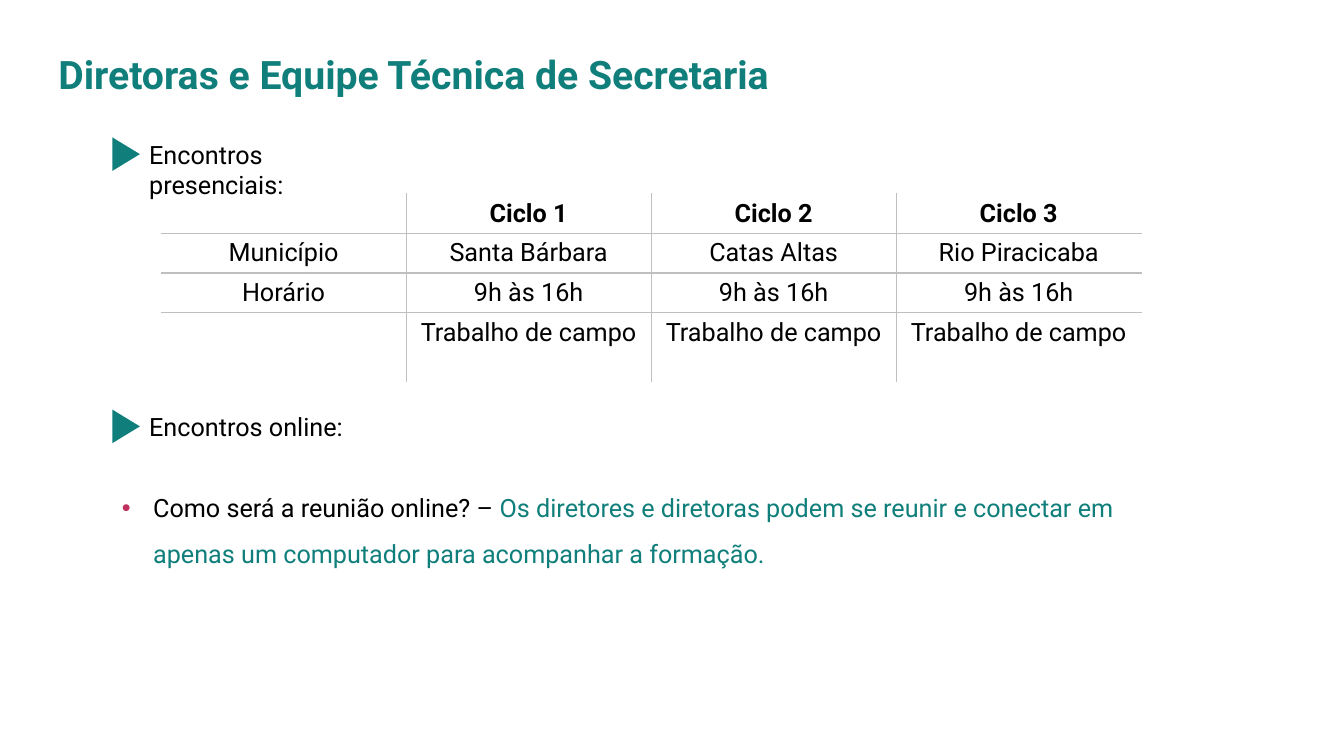
import lxml.etree
import pptx
import pptx.dml.color
import pptx.enum.shapes
import pptx.enum.text
import pptx.oxml
import pptx.oxml.ns
import pptx.util

Cm = pptx.util.Cm
Pt = pptx.util.Pt
RGBColor = pptx.dml.color.RGBColor
PP_ALIGN = pptx.enum.text.PP_ALIGN
qn = pptx.oxml.ns.qn

TEAL = RGBColor(0x10, 0x7F, 0x7B)
PINK = RGBColor(0xC0, 0x30, 0x5E)
GRAY = RGBColor(0xBF, 0xBF, 0xBF)
BLACK = RGBColor(0, 0, 0)

CYCLES = [
    ["", "Ciclo 1", "Ciclo 2", "Ciclo 3"],
    ["Município", "Santa Bárbara", "Catas Altas", "Rio Piracicaba"],
    ["Horário"] + ["9h às 16h"] * 3,
    [""] + ["Trabalho de campo"] * 3,
]
ROW_HEIGHTS = [Cm(1), Cm(1), Cm(1), Cm(1.75)]


def set_font(font, color=BLACK, size=18, bold=False):
    font.name = "Roboto"
    font.size = Pt(size)
    font.bold = bold
    font.color.rgb = color


def add_title(s, text, left, top, width, height):
    sp = s.shapes.title
    sp.left, sp.top, sp.width, sp.height = left, top, width, height
    tf = sp.text_frame
    tf.text = text
    tf.auto_size = pptx.enum.text.MSO_AUTO_SIZE.NONE
    tf.vertical_anchor = pptx.enum.text.MSO_ANCHOR.MIDDLE
    tf.margin_left = tf.margin_right = Cm(0.33)
    tf.margin_top = tf.margin_bottom = Cm(0.33)
    p = tf.paragraphs[0]
    p.alignment = PP_ALIGN.LEFT
    set_font(p.font, TEAL, 28, True)


def add_heading(s, text, left, top, width):
    # Marker pointing right, to the left of the label
    sp = s.shapes.add_shape(pptx.enum.shapes.MSO_SHAPE.ISOSCELES_TRIANGLE,
                            left - Cm(0.75), top + Cm(0.16), Cm(0.84), Cm(0.69))
    sp.rotation = 90
    sp.shadow.inherit = False
    sp.fill.solid()
    sp.fill.fore_color.rgb = TEAL
    sp.line.fill.background()
    # Label
    tf = s.shapes.add_textbox(left, top, width, Cm(1.02)).text_frame
    tf.word_wrap = True
    tf.margin_right = Cm(0.27)
    p = tf.paragraphs[0]
    p.text = text
    set_font(p.font)


def set_borders(cell, sides):
    tc_pr = cell._tc.get_or_add_tcPr()
    for i, side in enumerate(sides):
        ln = pptx.oxml.parse_xml(
            f'<a:ln{side} {pptx.oxml.ns.nsdecls("a")} w="12700"><a:solidFill>'
            f'<a:srgbClr val="{GRAY}"/></a:solidFill></a:ln{side}>')
        tc_pr.insert(i, ln)


def add_cycles_table(s, left, top, width):
    rows, cols = len(CYCLES), len(CYCLES[0])
    table = s.shapes.add_table(rows, cols, left, top, width, sum(ROW_HEIGHTS)).table
    table.first_row = table.horz_banding = False
    for row, height in zip(table.rows, ROW_HEIGHTS):
        row.height = height
    for r, texts in enumerate(CYCLES):
        for c, text in enumerate(texts):
            cell = table.cell(r, c)
            cell.fill.background()
            # Inner grid lines only
            inner = {"L": c > 0, "R": c < cols - 1, "T": r > 0, "B": r < rows - 1}
            set_borders(cell, [side for side in inner if inner[side]])
            p = cell.text_frame.paragraphs[0]
            p.text = text
            p.alignment = PP_ALIGN.CENTER
            set_font(p.font, bold=r == 0)


def add_question(s, question, answer, left, top, width, height):
    tf = s.shapes.add_textbox(left, top, width, height).text_frame
    tf.word_wrap = True
    p = tf.paragraphs[0]
    p.line_spacing = 1.5
    # Bullet with hanging indent
    p_pr = p._p.get_or_add_pPr()
    p_pr.set("marL", str(Cm(0.79)))
    p_pr.set("indent", str(-Cm(0.79)))
    bu_clr = lxml.etree.SubElement(p_pr, qn("a:buClr"))
    lxml.etree.SubElement(bu_clr, qn("a:srgbClr"), val=str(PINK))
    lxml.etree.SubElement(p_pr, qn("a:buFont"), typeface="Arial")
    lxml.etree.SubElement(p_pr, qn("a:buChar"), char="•")
    for text, color in ((question, BLACK), (answer, TEAL)):
        r = p.add_run()
        r.text = text
        set_font(r.font, color)


def main():
    prs = pptx.Presentation()
    prs.slide_width, prs.slide_height = Cm(33.87), Cm(19.05)
    s = prs.slides.add_slide(prs.slide_layouts[5])

    add_title(s, "Diretoras e Equipe Técnica de Secretaria",
              Cm(1.14), Cm(0.84), Cm(30.53), Cm(2.06))
    add_cycles_table(s, Cm(4.06), Cm(4.88), Cm(24.7))
    add_heading(s, "Encontros presenciais:", Cm(3.51), Cm(3.38), Cm(6.85))
    add_heading(s, "Encontros online:", Cm(3.51), Cm(10.24), Cm(5.46))
    add_question(s, "Como será a reunião online? – ",
                 "Os diretores e diretoras podem se reunir e conectar em "
                 "apenas um computador para acompanhar a formação.",
                 Cm(2.82), Cm(11.91), Cm(25.93), Cm(2.44))

    prs.save("out.pptx")


if __name__ == "__main__":
    main()
